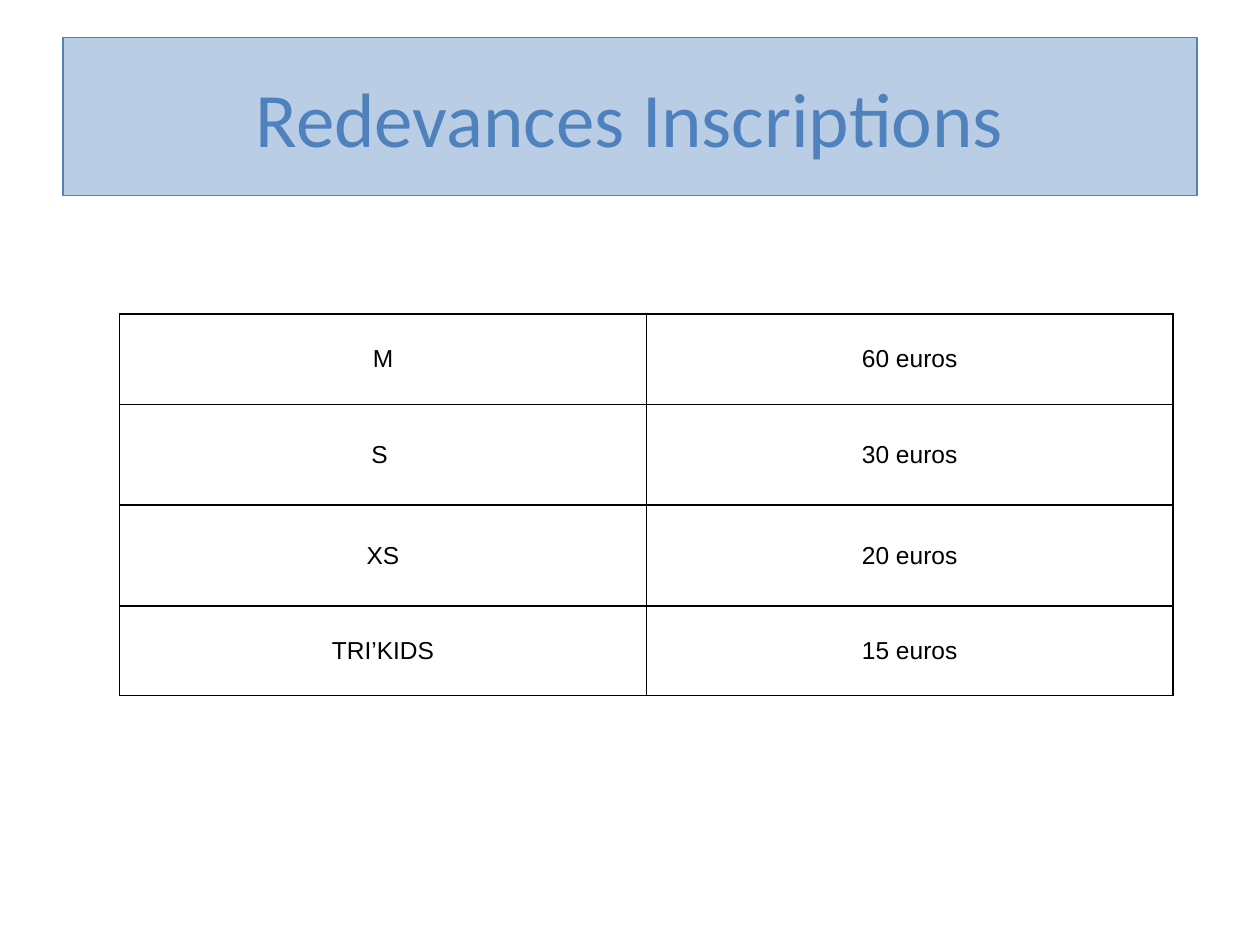
from dataclasses import dataclass

from lxml.etree import SubElement
from pptx import Presentation
from pptx.dml.color import RGBColor
from pptx.enum.shapes import MSO_SHAPE
from pptx.enum.text import MSO_ANCHOR, PP_ALIGN
from pptx.oxml.ns import qn
from pptx.util import Inches, Pt


@dataclass(frozen=True)
class Theme:
    banner_fill: RGBColor = RGBColor(0xB9, 0xCD, 0xE5)
    accent: RGBColor = RGBColor(0x4F, 0x81, 0xBD)
    ink: RGBColor = RGBColor(0, 0, 0)
    paper: RGBColor = RGBColor(0xFF, 0xFF, 0xFF)
    title_font: str = "Calibri"
    table_font: str = "Arial"
    title_size: Pt = Pt(44)
    table_size: Pt = Pt(14)
    banner_line: Pt = Pt(0.75)
    table_line: Pt = Pt(1)


THEME = Theme()
FEES = [
    ("M", "60 euros"),
    ("S ", "30 euros"),
    ("XS", "20 euros"),
    ("TRI’KIDS", "15 euros"),
]
ROW_HEIGHTS = [0.72, 0.8, 0.8, 0.71]
COLUMN_WIDTH = 4.18


def write_centred(frame, text, font_name, size, color):
    frame.text = text
    para = frame.paragraphs[0]
    para.alignment = PP_ALIGN.CENTER
    span = para.runs[0]
    span.font.name = font_name
    span.font.size = size
    span.font.color.rgb = color


def add_banner(page, text):
    box = page.shapes.add_shape(
        MSO_SHAPE.RECTANGLE, Inches(0.5), Inches(0.3), Inches(9), Inches(1.25)
    )
    box.shadow.inherit = False
    box.fill.solid()
    box.fill.fore_color.rgb = THEME.banner_fill
    box.line.color.rgb = THEME.accent
    box.line.width = THEME.banner_line
    box.text_frame.word_wrap = True
    box.text_frame.vertical_anchor = MSO_ANCHOR.MIDDLE
    write_centred(
        box.text_frame, text, THEME.title_font, THEME.title_size, THEME.accent
    )


def add_borders(cell):
    properties = cell._tc.get_or_add_tcPr()
    for side in ("a:lnL", "a:lnR", "a:lnT", "a:lnB"):
        line = SubElement(properties, qn(side), w=str(THEME.table_line))
        fill = SubElement(line, qn("a:solidFill"))
        SubElement(fill, qn("a:srgbClr"), val=str(THEME.ink))


def format_cell(cell, text):
    add_borders(cell)
    cell.fill.solid()
    cell.fill.fore_color.rgb = THEME.paper
    cell.vertical_anchor = MSO_ANCHOR.MIDDLE
    write_centred(
        cell.text_frame, text, THEME.table_font, THEME.table_size, THEME.ink
    )


def add_fee_table(page, fees):
    columns = len(fees[0])
    table = page.shapes.add_table(
        len(fees), columns, Inches(0.95), Inches(2.49),
        Inches(columns * COLUMN_WIDTH), Inches(sum(ROW_HEIGHTS)),
    ).table
    for column in table.columns:
        column.width = Inches(COLUMN_WIDTH)
    for row, height, texts in zip(table.rows, ROW_HEIGHTS, fees):
        row.height = Inches(height)
        for cell, text in zip(row.cells, texts):
            format_cell(cell, text)


def main():
    deck = Presentation()
    deck.slide_width = Inches(10)
    deck.slide_height = Inches(7.5)
    page = deck.slides.add_slide(deck.slide_layouts[6])
    add_banner(page, "Redevances Inscriptions")
    add_fee_table(page, FEES)
    deck.save("out.pptx")


if __name__ == "__main__":
    main()
